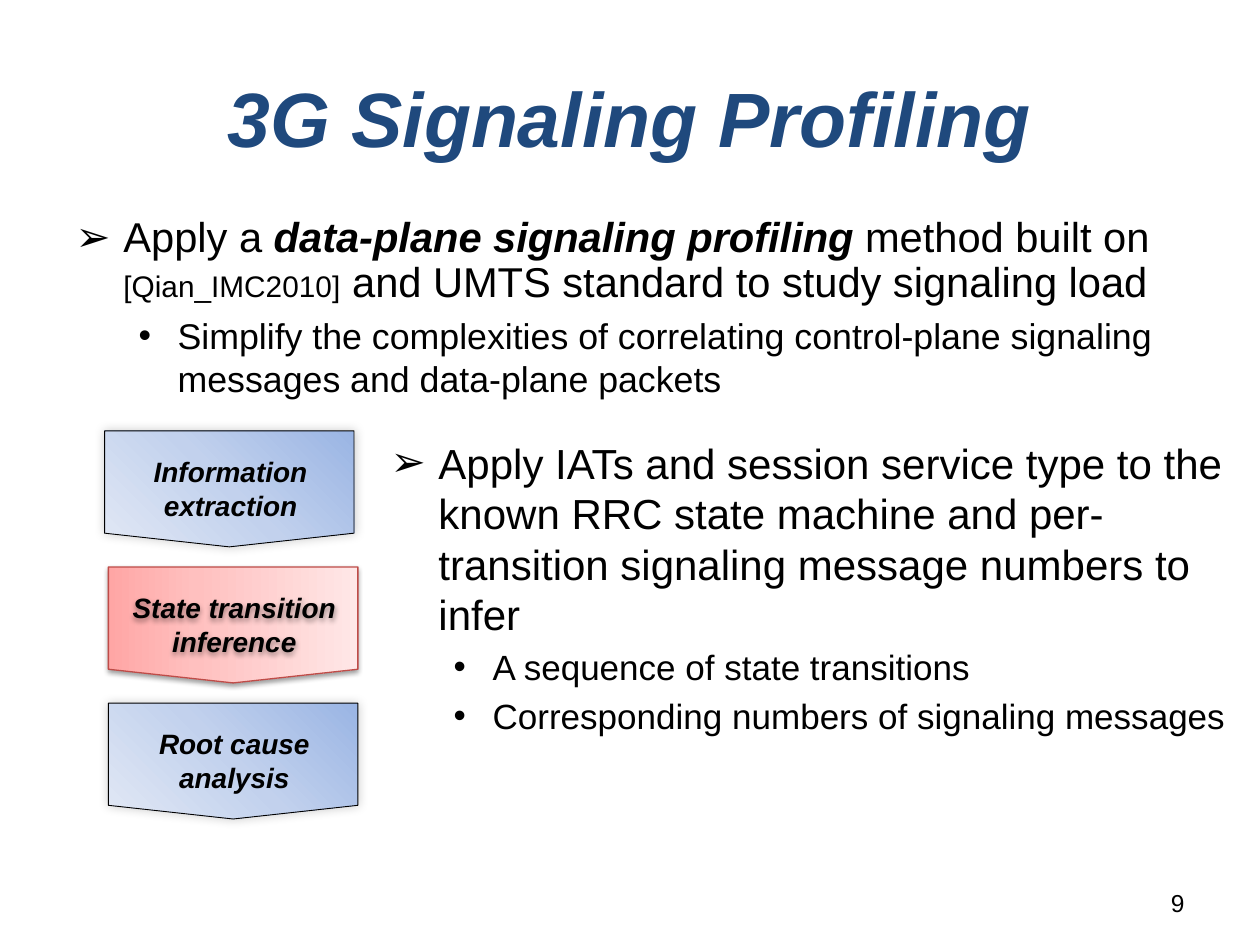
from pptx import Presentation
from pptx import util as u
from pptx.dml.color import RGBColor
from pptx.enum import shapes, text
from pptx.oxml import parse_xml
from pptx.oxml.ns import nsdecls, qn

BLACK = RGBColor(0x00, 0x00, 0x00)
NAVY = RGBColor(0x1F, 0x49, 0x7D)
RED = RGBColor(0xBF, 0x4C, 0x48)
BLUES = [(0, RGBColor(0x9A, 0xB5, 0xE4)), (50, RGBColor(0xC2, 0xD1, 0xED)),
         (100, RGBColor(0xE1, 0xE8, 0xF5))]
PINKS = [(0, RGBColor(0xFF, 0xA6, 0xA5)), (35, RGBColor(0xFF, 0xC0, 0xBF)),
         (100, RGBColor(0xFF, 0xE7, 0xE7))]
PLAIN = dict(stops=BLUES, angle=45, line=BLACK, width=0.5,
             shade=(20, 6, 0, 225), glow=False)
FOCUS = dict(stops=PINKS, angle=270, line=RED, width=0.75,
             shade=(38, 3.1, 1.6, 90), glow=True)
MARKS = [("➢", 0.38, 0.38, 0.5), ("•", 0.81, 0.31, 0.2)]


def place(shape, left, top, width, height):
    shape.left, shape.top = u.Inches(left), u.Inches(top)
    shape.width, shape.height = u.Inches(width), u.Inches(height)


def style(font, size, color=BLACK, strong=False):
    font.name, font.size = "Arial", u.Pt(size)
    font.color.rgb = color
    font.bold = font.italic = strong


def add_title(slide, box):
    title = slide.shapes.title
    place(title, *box)
    title.text_frame.text = "3G Signaling Profiling"
    para = title.text_frame.paragraphs[0]
    para.alignment = text.PP_ALIGN.CENTER
    style(para.font, 44, NAVY, True)


def set_mark(para, level):
    mark, left, hang, _ = MARKS[level]
    props = para._p.get_or_add_pPr()
    props.set("marL", str(u.Inches(left)))
    props.set("indent", str(-u.Inches(hang)))
    props.append(parse_xml(f'<a:buFont {nsdecls("a")} typeface="Arial"/>'))
    props.append(parse_xml(f'<a:buChar {nsdecls("a")} char="{mark}"/>'))


def add_list(holder, box, items, lead=1.0):
    place(holder, *box)
    frame = holder.text_frame
    frame.auto_size = text.MSO_AUTO_SIZE.NONE
    for pos, (level, size, runs) in enumerate(items):
        para = frame.add_paragraph() if pos else frame.paragraphs[0]
        para.level = level
        para.line_spacing = 1.0 if level else lead
        para.space_before = u.Pt(round(size * MARKS[level][3], 1))
        set_mark(para, level)
        style(para.font, size)
        for words, small, strong in runs:
            run = para.add_run()
            run.text = words
            style(run.font, small or size, BLACK, strong)


def add_shade(shape, alpha, blur, dist, angle):
    shape.shadow.inherit = False
    shape._element.spPr.find(qn("a:effectLst")).append(parse_xml(
        f'<a:outerShdw {nsdecls("a")} blurRad="{u.Pt(blur)}" dist="{u.Pt(dist)}" '
        f'dir="{angle * 60000}" algn="ctr" rotWithShape="0">'
        f'<a:srgbClr val="{BLACK}"><a:alpha val="{alpha * 1000}"/></a:srgbClr>'
        '</a:outerShdw>'))


def set_blend(shape, stops, angle):
    shape.fill.gradient()
    props = shape._element.spPr
    marks = "".join(f'<a:gs pos="{pos * 1000}"><a:srgbClr val="{color}"/></a:gs>'
                    for pos, color in stops)
    props.replace(props.find(qn("a:gradFill")), parse_xml(
        f'<a:gradFill {nsdecls("a")} rotWithShape="1"><a:gsLst>{marks}</a:gsLst>'
        f'<a:lin ang="{angle * 60000}" scaled="0"/></a:gradFill>'))


def add_step(slide, box, words, look):
    left, top, width, height = box
    shift = (width - height) / 2
    arrow = slide.shapes.add_shape(
        shapes.MSO_SHAPE.PENTAGON, u.Inches(left + shift), u.Inches(top - shift),
        u.Inches(height), u.Inches(width))
    arrow.rotation = 90
    arrow.adjustments[0] = 0.118
    set_blend(arrow, look["stops"], look["angle"])
    arrow.line.color.rgb = look["line"]
    arrow.line.width = u.Pt(look["width"])
    add_shade(arrow, *look["shade"])
    label = slide.shapes.add_textbox(
        u.Inches(left + 0.02), u.Inches(top + 0.14),
        u.Inches(width - 0.02), u.Inches(0.52))
    label.text_frame.word_wrap = True
    label.text_frame.text = words
    para = label.text_frame.paragraphs[0]
    para.alignment = text.PP_ALIGN.CENTER
    style(para.font, 16, BLACK, True)
    if look["glow"]:
        add_shade(label, *look["shade"])


def add_steps(slide, top, gap):
    steps = [(0.83, "Information extraction", PLAIN),
             (0.86, "State transition inference", FOCUS),
             (0.86, "Root cause analysis", PLAIN)]
    for row, (left, words, look) in enumerate(steps):
        add_step(slide, (left, top + row * gap, 1.98, 0.92), words, look)


def add_number(slide, box):
    label = slide.shapes.add_textbox(*map(u.Inches, box))
    label.text_frame.word_wrap = True
    label.text_frame.text = "9"
    para = label.text_frame.paragraphs[0]
    para.alignment = text.PP_ALIGN.RIGHT
    style(para.font, 14)


def main():
    deck = Presentation()
    deck.slide_width, deck.slide_height = u.Inches(10), u.Inches(7.5)
    slide = deck.slides.add_slide(deck.slide_layouts[3])
    add_title(slide, (0.5, 0.3, 9, 1.25))
    add_list(slide.placeholders[1], (0.5, 1.67, 9, 1.58), [
        (0, 23.8, [("Apply a ", None, False),
                   ("data-plane signaling profiling ", None, True),
                   ("method built on ", None, False),
                   ("[Qian_IMC2010]", 17, False),
                   (" and UMTS standard to study signaling load", None, False)]),
        (1, 20.4, [("Simplify the complexities of correlating control-plane "
                    "signaling messages and data-plane packets", None, False)]),
    ], 0.9)
    add_list(slide.placeholders[2], (3, 3.42, 7, 3.58), [
        (0, 24, [("Apply IATs and session service type to the known RRC state "
                  "machine and per-transition signaling message numbers to infer",
                  None, False)]),
        (1, 20, [("A sequence of state transitions", None, False)]),
        (1, 20, [("Corresponding numbers of signaling messages", None, False)]),
    ])
    add_steps(slide, 3.42, 1.08)
    add_number(slide, (7.17, 7, 2.33, 0.35))
    deck.save("out.pptx")


if __name__ == "__main__":
    main()
